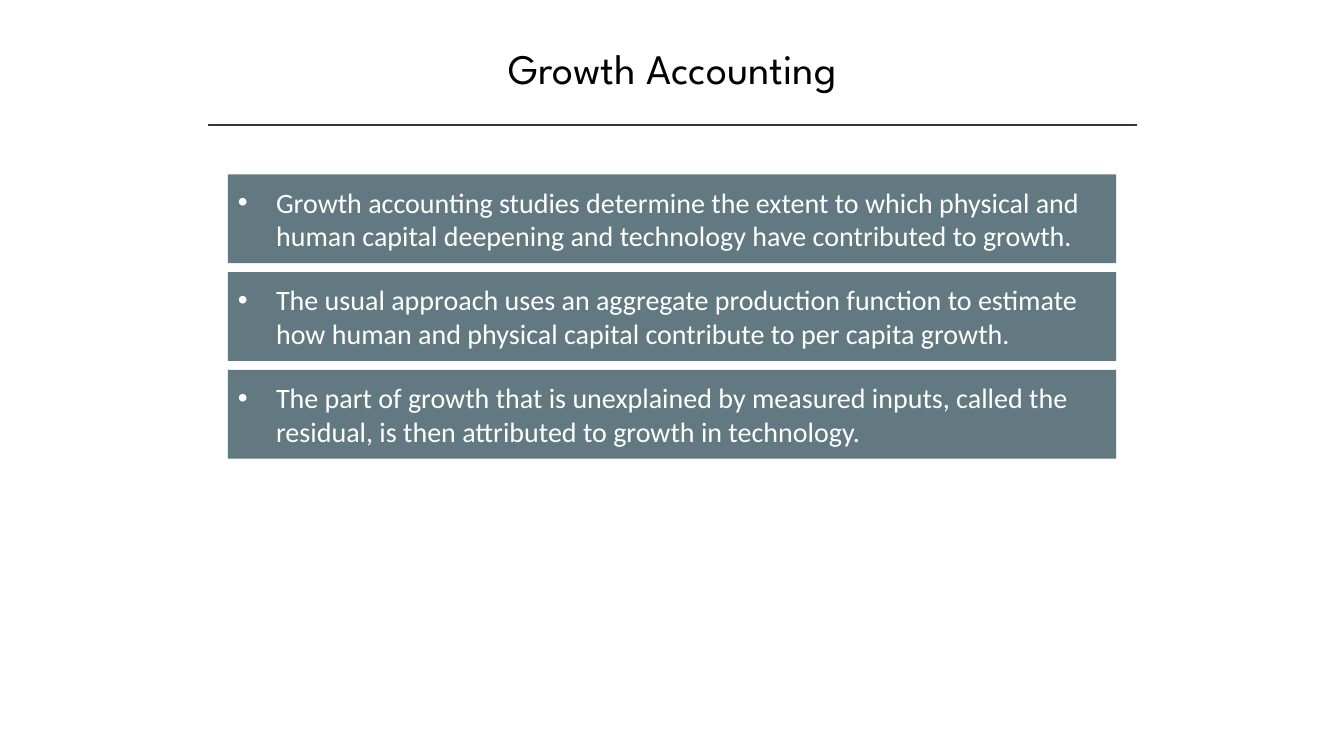
from lxml import etree
from pptx import Presentation
from pptx.dml.color import RGBColor
from pptx.enum.shapes import MSO_CONNECTOR as LINE, MSO_SHAPE as SHAPE
from pptx.enum.text import MSO_ANCHOR as ANCHOR, MSO_AUTO_SIZE as FIT, PP_ALIGN as ALIGN
from pptx.oxml.ns import qn
from pptx.util import Inches, Pt

POINTS = [
    "Growth accounting studies determine the extent to which physical and "
    "human capital deepening and technology have contributed to growth.",
    "The usual approach uses an aggregate production function to estimate "
    "how human and physical capital contribute to per capita growth.",
    "The part of growth that is unexplained by measured inputs, called the "
    "residual, is then attributed to growth in technology.",
]


def color(code):
    return RGBColor.from_string(code)


def style(para, name, size, code):
    para.font.name = name
    para.font.size = Pt(size)
    para.font.color.rgb = color(code)


deck = Presentation()
deck.slide_width, deck.slide_height = Inches(13.33), Inches(7.5)
slide = deck.slides.add_slide(deck.slide_layouts[5])

# Title and rule
title = slide.shapes.title
title.left, title.top = Inches(1.67), Inches(0.37)
title.width, title.height = Inches(10), Inches(0.61)
frame = title.text_frame
frame.text = "Growth Accounting"
frame.word_wrap = True
frame.auto_size = FIT.NONE
frame.vertical_anchor = ANCHOR.TOP
para = frame.paragraphs[0]
para.alignment = ALIGN.CENTER
style(para, "League Spartan", 30, "000000")

rule = slide.shapes.add_connector(
    LINE.STRAIGHT, Inches(2.06), Inches(1.24), Inches(11.28), Inches(1.24))
rule.line.color.rgb = color("323542")
rule.line.width = Pt(1)
etree.SubElement(rule.element.spPr, qn("a:effectLst"))

# Bulleted cards
for row, text in enumerate(POINTS):
    card = slide.shapes.add_shape(
        SHAPE.RECTANGLE, Inches(2.26), Inches(1.73 + 0.97 * row),
        Inches(8.81), Inches(0.88))
    card.shadow.inherit = False
    card.fill.solid()
    card.fill.fore_color.rgb = color("627981")
    card.line.fill.background()
    frame = card.text_frame
    frame.text = text
    frame.word_wrap = True
    frame.vertical_anchor = ANCHOR.MIDDLE
    frame.margin_right = Inches(0.2)
    para = frame.paragraphs[0]
    para.alignment = ALIGN.LEFT
    props = para._p.get_or_add_pPr()
    props.set("marL", str(Inches(0.38)))
    props.set("indent", str(Inches(-0.38)))
    etree.SubElement(props, qn("a:buFont"), typeface="Arial")
    etree.SubElement(props, qn("a:buChar"), char="•")
    style(para, "Calibri", 20, "FFFFFF")

deck.save("out.pptx")
